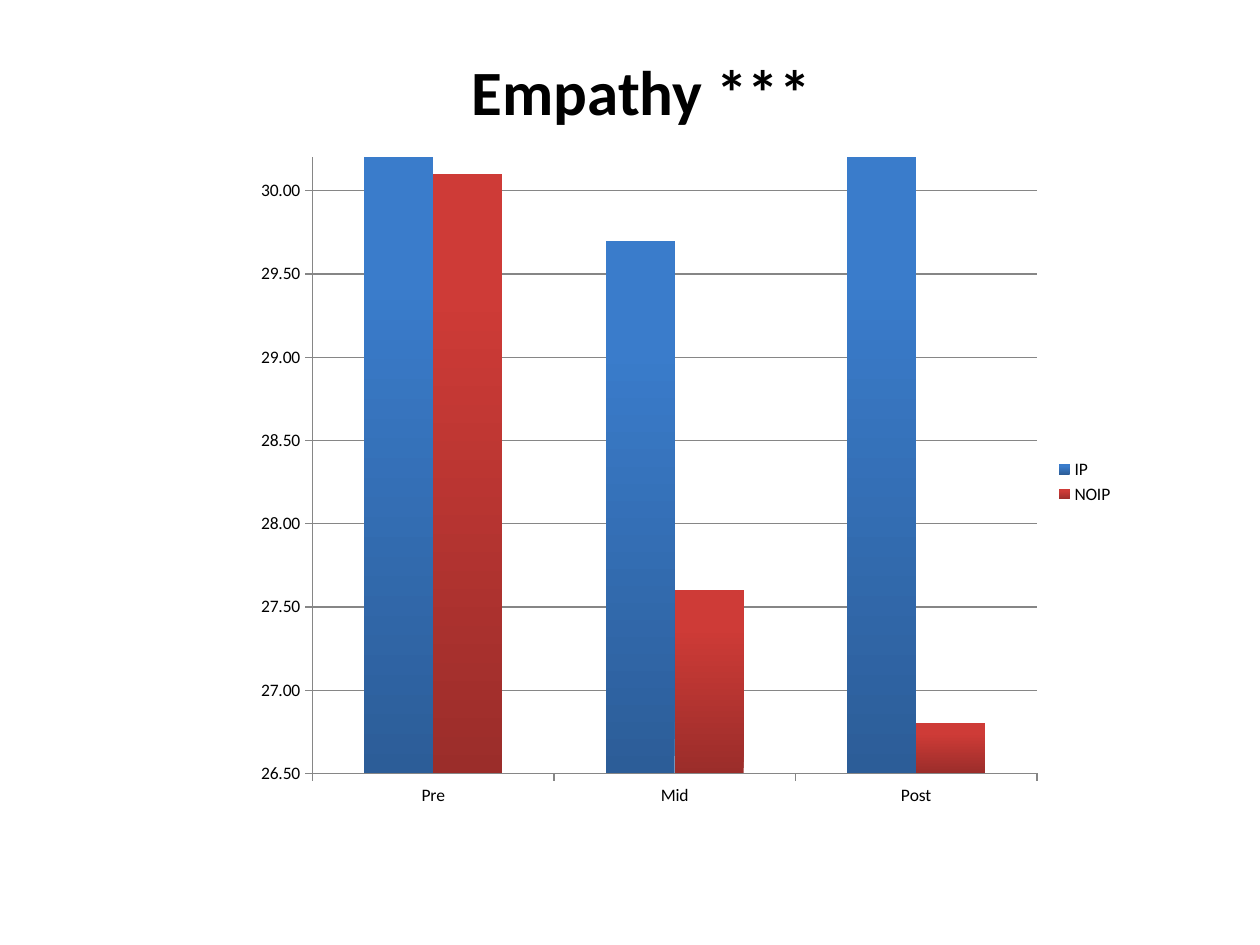
from dataclasses import dataclass

from lxml import etree
from pptx import Presentation
from pptx.chart.data import CategoryChartData
from pptx.dml.color import RGBColor
from pptx.enum.chart import XL_CHART_TYPE, XL_LEGEND_POSITION, XL_TICK_MARK
from pptx.enum.text import MSO_ANCHOR, PP_ALIGN
from pptx.oxml.ns import qn
from pptx.util import Inches, Pt

COLUMNS = XL_CHART_TYPE.COLUMN_CLUSTERED
LEGEND_RIGHT = XL_LEGEND_POSITION.RIGHT
TICK_OUTSIDE = XL_TICK_MARK.OUTSIDE
MIDDLE = MSO_ANCHOR.MIDDLE
CENTER = PP_ALIGN.CENTER
TITLE_ONLY = 5


@dataclass(frozen=True)
class Theme:
    font: str = "Calibri"
    title_size: Pt = Pt(36)
    chart_size: Pt = Pt(10)
    text: RGBColor = RGBColor(0, 0, 0)
    axis: RGBColor = RGBColor(0x86, 0x86, 0x86)
    axis_width: Pt = Pt(0.75)
    # Bottom and top colour of the columns in each series
    gradients: tuple = (("2C5D98", "3A7CCB"), ("9B2D2A", "CE3B37"))


THEME = Theme()
CATEGORIES = ("Pre", "Mid", "Post")
SCORES = {"IP": (30.2, 29.7, 30.2), "NOIP": (30.1, 27.6, 26.8)}


def style_font(font, size):
    font.name = THEME.font
    font.size = size
    font.color.rgb = THEME.text


def style_line(line):
    line.color.rgb = THEME.axis
    line.width = THEME.axis_width


def add_title(slide, text, left, top, width, height):
    title = slide.shapes.title
    title.left, title.top, title.width, title.height = left, top, width, height
    title.text_frame.text = text
    title.text_frame.vertical_anchor = MIDDLE
    paragraph = title.text_frame.paragraphs[0]
    paragraph.alignment = CENTER
    font = paragraph.runs[0].font
    style_font(font, THEME.title_size)
    font.bold = True


def set_plot_layout(chart, **fractions):
    """Place the inner plot area by fractions of the chart's size."""
    plot_area = chart.element.find(".//" + qn("c:plotArea"))
    for layout in plot_area.findall(qn("c:layout")):
        plot_area.remove(layout)
    layout = etree.Element(qn("c:layout"))
    plot_area.insert(0, layout)
    manual = etree.SubElement(layout, qn("c:manualLayout"))
    settings = {"layoutTarget": "inner", "xMode": "edge", "yMode": "edge", **fractions}
    for name, value in settings.items():
        etree.SubElement(manual, qn("c:" + name)).set("val", str(value))


def fill_gradient(fill, colors):
    fill.gradient()
    fill.gradient_angle = 90
    for stop, color, position in zip(fill.gradient_stops, colors, (0, 0.8)):
        stop.color.rgb = RGBColor.from_string(color)
        stop.position = position


def add_score_chart(slide, left, top, width, height):
    data = CategoryChartData(number_format="###0.00")
    data.categories = CATEGORIES
    for name, values in SCORES.items():
        data.add_series(name, values)
    chart = slide.shapes.add_chart(COLUMNS, left, top, width, height, data).chart
    style_font(chart.font, THEME.chart_size)
    chart.has_title = False
    chart.has_legend = True
    chart.legend.position = LEGEND_RIGHT
    chart.legend.include_in_layout = False
    set_plot_layout(
        chart,
        x=Inches(0.55) / width,
        y=Inches(0.1) / height,
        w=Inches(5.75) / width,
        h=Inches(4.89) / height,
    )

    plot = chart.plots[0]
    plot.vary_by_categories = False
    plot.gap_width = 150
    plot.overlap = 0
    for series, colors in zip(plot.series, THEME.gradients):
        fill_gradient(series.format.fill, colors)

    for axis in (chart.category_axis, chart.value_axis):
        axis.major_tick_mark = TICK_OUTSIDE
        style_line(axis.format.line)
    scale = chart.value_axis
    scale.minimum_scale, scale.maximum_scale, scale.major_unit = 26.5, 30.2, 0.5
    scale.has_major_gridlines = True
    style_line(scale.major_gridlines.format.line)
    scale.tick_labels.number_format = "###0.00"
    scale.tick_labels.number_format_is_linked = False


def main():
    presentation = Presentation()
    presentation.slide_width, presentation.slide_height = Inches(10), Inches(7.5)
    slide = presentation.slides.add_slide(presentation.slide_layouts[TITLE_ONLY])
    add_title(slide, "Empathy ***", Inches(0.59), Inches(0.29), Inches(9), Inches(0.86))
    add_score_chart(slide, Inches(1.93), Inches(1.15), Inches(7.01), Inches(5.35))
    presentation.save("out.pptx")


if __name__ == "__main__":
    main()
